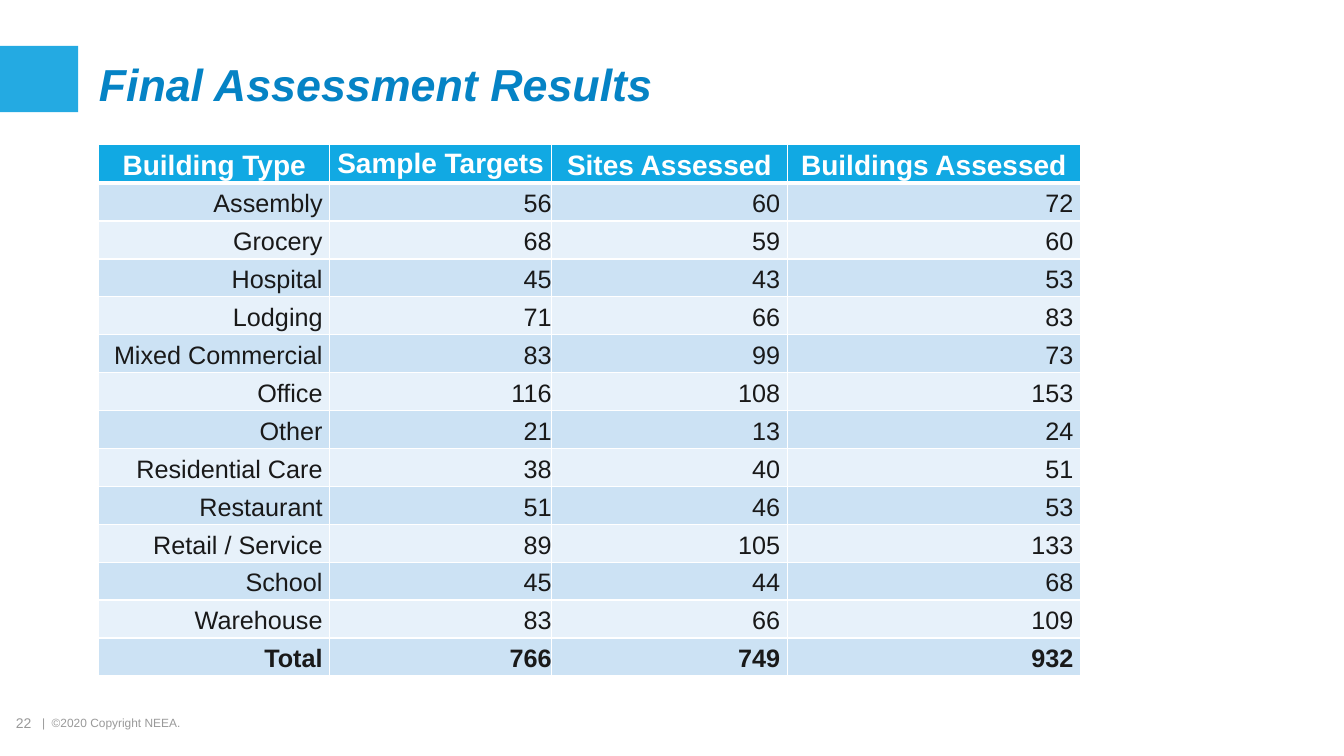
from lxml import etree
from pptx import Presentation
from pptx import util as u
from pptx.dml.color import RGBColor
from pptx.enum import shapes, text
from pptx.oxml import ns

WHITE = RGBColor(0xFF, 0xFF, 0xFF)
ACCENT_BLUE = RGBColor(0x24, 0xAA, 0xE2)
TITLE_BLUE = RGBColor(0x05, 0x83, 0xC5)
HEADER_BLUE = RGBColor(0x11, 0xA9, 0xE3)
DARK_BAND = RGBColor(0xCC, 0xE2, 0xF4)
LIGHT_BAND = RGBColor(0xE7, 0xF1, 0xFA)
INK = RGBColor(0x19, 0x19, 0x19)
GREY = RGBColor(0x99, 0x99, 0x99)

HEADINGS = ("Building Type", "Sample Targets", "Sites Assessed", "Buildings Assessed")
RESULTS = (
    ("Assembly", 56, 60, 72),
    ("Grocery", 68, 59, 60),
    ("Hospital", 45, 43, 53),
    ("Lodging", 71, 66, 83),
    ("Mixed Commercial", 83, 99, 73),
    ("Office", 116, 108, 153),
    ("Other", 21, 13, 24),
    ("Residential Care", 38, 40, 51),
    ("Restaurant", 51, 46, 53),
    ("Retail / Service", 89, 105, 133),
    ("School", 45, 44, 68),
    ("Warehouse", 83, 66, 109),
    ("Total", 766, 749, 932),
)
COLUMN_WIDTHS = (5.82, 5.59, 5.94, 7.39)
TARGETS_COLUMN = 1


class SlideBuilder:
    """Holds the text style and the slide being filled; lengths are in cm."""

    font_name = "Arial"
    cell_inset = 0.18
    line_spacing = 1.15

    def __init__(self, slide):
        self.slide = slide

    def add_run(self, paragraph, words, size, color, bold=False, italic=False):
        run = paragraph.add_run()
        run.text = words
        font = run.font
        font.name, font.size = self.font_name, u.Pt(size)
        font.bold, font.italic = bold, italic
        font.color.rgb = color

    def add_block(self, left, top, width, height, color):
        block = self.slide.shapes.add_shape(
            shapes.MSO_SHAPE.RECTANGLE, *map(u.Cm, (left, top, width, height)))
        block.shadow.inherit = False
        block.fill.solid()
        block.fill.fore_color.rgb = color
        block.line.fill.background()

    def add_text(self, left, top, width, height, words, size, color,
                 inset=0, anchor=text.MSO_ANCHOR.TOP, **emphasis):
        frame = self.slide.shapes.add_textbox(
            *map(u.Cm, (left, top, width, height))).text_frame
        frame.word_wrap = True
        frame.vertical_anchor = anchor
        frame.margin_left = u.Cm(inset)
        frame.margin_right = frame.margin_top = frame.margin_bottom = 0
        self.add_run(frame.paragraphs[0], words, size, color, **emphasis)

    def set_borders(self, cell, top, bottom):
        """Draw white borders: 1 pt at the sides, given points above and below."""
        properties = cell._tc.get_or_add_tcPr()
        sides = (("a:lnL", 1), ("a:lnR", 1), ("a:lnT", top), ("a:lnB", bottom))
        for position, (tag, points) in enumerate(sides):
            border = etree.Element(ns.qn(tag), w=str(u.Pt(points)))
            fill = etree.SubElement(border, ns.qn("a:solidFill"))
            etree.SubElement(fill, ns.qn("a:srgbClr"), val=str(WHITE))
            properties.insert(position, border)

    def fill_cell(self, cell, words, fill, size, color, bold, align, inset, spacing):
        cell.fill.solid()
        cell.fill.fore_color.rgb = fill
        cell.vertical_anchor = text.MSO_ANCHOR.MIDDLE
        cell.margin_left = cell.margin_right = u.Cm(inset)
        cell.margin_top = cell.margin_bottom = 0
        paragraph = cell.text_frame.paragraphs[0]
        paragraph.alignment = align
        paragraph.line_spacing = spacing
        self.add_run(paragraph, words, size, color, bold)

    def add_results_table(self, left, top, height, headings, results):
        rows = (headings, *results)
        table = self.slide.shapes.add_table(
            len(rows), len(headings), u.Cm(left), u.Cm(top),
            u.Cm(sum(COLUMN_WIDTHS)), u.Cm(height)).table
        for column, width in zip(table.columns, COLUMN_WIDTHS):
            column.width = u.Cm(width)
        for r, values in enumerate(rows):
            table.rows[r].height = u.Cm(height / len(rows))
            header = r == 0
            if header:
                look = (HEADER_BLUE, 20, WHITE, True, text.PP_ALIGN.CENTER)
            else:
                band = DARK_BAND if r % 2 else LIGHT_BAND
                is_total = r == len(rows) - 1
                look = (band, 18, INK, is_total, text.PP_ALIGN.RIGHT)
            for c, value in enumerate(values):
                targets = c == TARGETS_COLUMN
                inset = 0 if targets else self.cell_inset
                spacing = 1.0 if header and targets else self.line_spacing
                cell = table.cell(r, c)
                self.fill_cell(cell, str(value), *look, inset, spacing)
                self.set_borders(cell, top=3 if r == 1 else 1, bottom=3 if header else 1)


def main():
    deck = Presentation()
    deck.slide_width, deck.slide_height = u.Cm(33.87), u.Cm(19.05)
    builder = SlideBuilder(deck.slides.add_slide(deck.slide_layouts[6]))

    builder.add_block(0, 1.16, 1.97, 1.67, ACCENT_BLUE)
    builder.add_text(1.02, 18.03, 5.38, 0.38, "|  ©2020 Copyright NEEA.", 8.5, GREY, inset=0.04)
    builder.add_text(2.49, 1.35, 28.93, 1.52, "Final Assessment Results", 32, TITLE_BLUE,
                     anchor=text.MSO_ANCHOR.MIDDLE, bold=True, italic=True)
    builder.add_text(0.36, 18.01, 0.66, 0.43, "22", 10, GREY, inset=0.04)
    builder.add_results_table(2.49, 3.64, 13.38, HEADINGS, RESULTS)

    deck.save("out.pptx")


if __name__ == "__main__":
    main()
